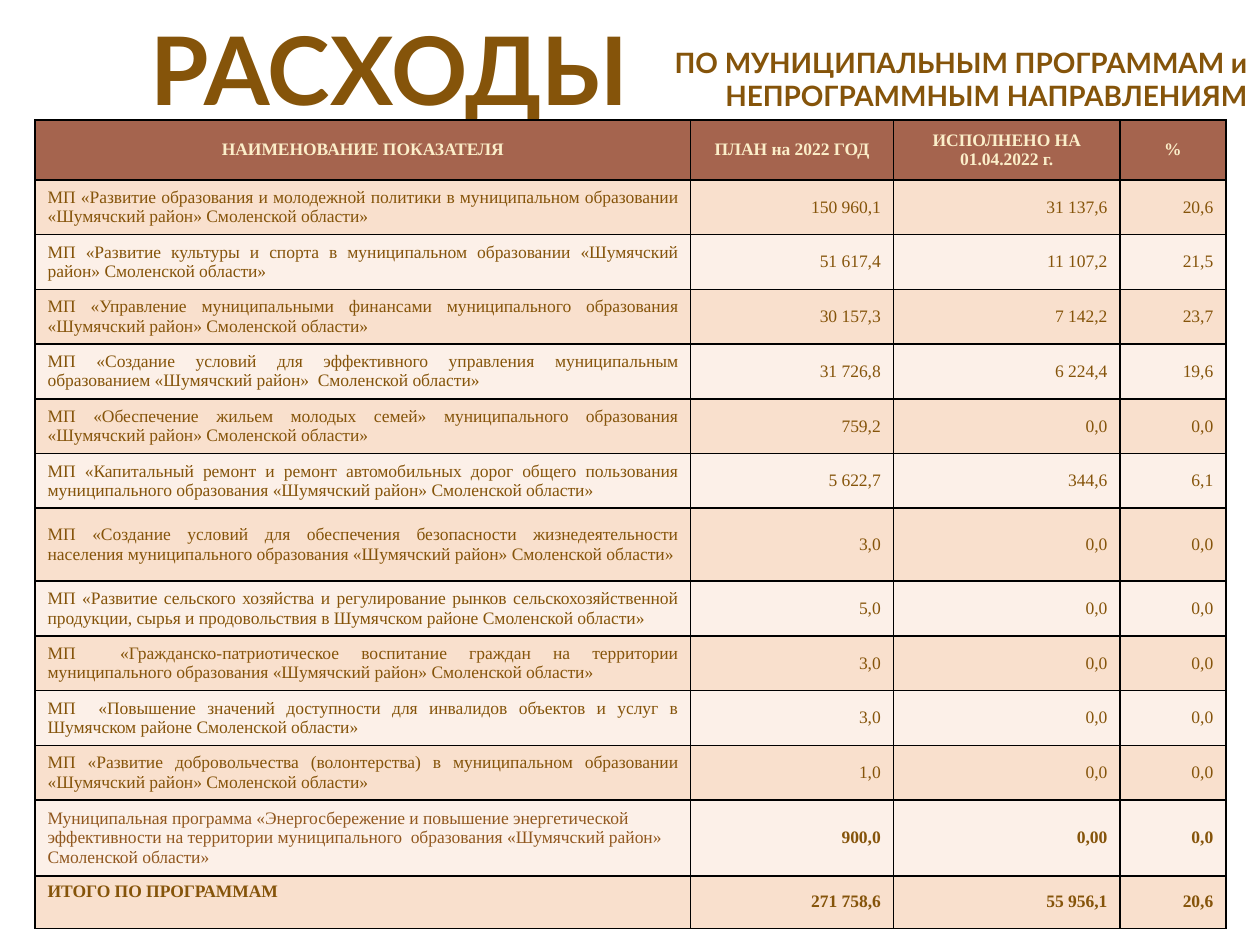
from lxml.etree import SubElement
from pptx import Presentation
from pptx.dml.color import RGBColor
from pptx.enum.text import MSO_ANCHOR as ANCHOR, PP_ALIGN as ALIGN
from pptx.oxml.ns import qn
from pptx.util import Pt

BROWN = RGBColor(0x85, 0x54, 0x0A)
LIGHT_BROWN = RGBColor(0x91, 0x58, 0x1F)
CREAM = RGBColor(0xFB, 0xEE, 0xC9)
HEADER_FILL = RGBColor(0xA5, 0x64, 0x4E)
BANDS = RGBColor(0xF9, 0xE0, 0xCD), RGBColor(0xFC, 0xF0, 0xE8)
BORDER = "000000"

TITLE = "РАСХОДЫ"
SUBTITLE = "ПО МУНИЦИПАЛЬНЫМ ПРОГРАММАМ и НЕПРОГРАММНЫМ НАПРАВЛЕНИЯМ"
HEADER = ("НАИМЕНОВАНИЕ ПОКАЗАТЕЛЯ", "ПЛАН на 2022 ГОД",
          "ИСПОЛНЕНО НА 01.04.2022 г.", "%")
PROGRAMS = [
    ("МП «Развитие образования и молодежной политики в муниципальном образовании "
     "«Шумячский район» Смоленской области»", "150 960,1", "31 137,6", "20,6"),
    ("МП «Развитие культуры и спорта в муниципальном образовании «Шумячский район» "
     "Смоленской области»", "51 617,4", "11 107,2", "21,5"),
    ("МП «Управление муниципальными финансами муниципального образования "
     "«Шумячский район» Смоленской области»", "30 157,3", "7 142,2", "23,7"),
    ("МП «Создание условий для эффективного управления муниципальным образованием "
     "«Шумячский район»  Смоленской области»", "31 726,8", "6 224,4", "19,6"),
    ("МП «Обеспечение жильем молодых семей» муниципального образования "
     "«Шумячский район» Смоленской области»", "759,2", "0,0", "0,0"),
    ("МП «Капитальный ремонт и ремонт автомобильных дорог общего пользования "
     "муниципального образования «Шумячский район» Смоленской области»",
     "5 622,7", "344,6", "6,1"),
    ("МП «Создание условий для обеспечения безопасности жизнедеятельности населения "
     "муниципального образования «Шумячский район» Смоленской области»",
     "3,0", "0,0", "0,0"),
    ("МП «Развитие сельского хозяйства и регулирование рынков сельскохозяйственной "
     "продукции, сырья и продовольствия в Шумячском районе Смоленской области»",
     "5,0", "0,0", "0,0"),
    ("МП  «Гражданско-патриотическое воспитание граждан на территории "
     "муниципального образования «Шумячский район» Смоленской области»",
     "3,0", "0,0", "0,0"),
    ("МП  «Повышение значений доступности для инвалидов объектов и услуг в "
     "Шумячском районе Смоленской области»", "3,0", "0,0", "0,0"),
    ("МП «Развитие добровольчества (волонтерства) в муниципальном образовании "
     "«Шумячский район» Смоленской области»", "1,0", "0,0", "0,0"),
    ("Муниципальная программа «Энергосбережение и повышение энергетической "
     "эффективности на территории муниципального  образования «Шумячский район» "
     "Смоленской области»", "900,0", "0,00", "0,0"),
]
TOTAL = ("ИТОГО ПО ПРОГРАММАМ", "271 758,6", "55 956,1", "20,6")
ROWS = [HEADER, *PROGRAMS, TOTAL]
SAFETY_ROW, ENERGY_ROW, TOTAL_ROW = 7, 12, 13

COL_WIDTHS = (374.5, 116, 129.5, 60.5)
ROW_HEIGHT = 30.1
SPECIAL_HEIGHTS = {0: 34.3, SAFETY_ROW: 41.7, ENERGY_ROW: 40.3}


def style(p, font, size, color, bold, align):
    p.alignment = align
    p.font.name, p.font.size, p.font.bold = font, Pt(size), bold
    p.font.color.rgb = color


def add_heading(slide, box, text, size, align, anchor):
    tf = slide.shapes.add_textbox(*map(Pt, box)).text_frame
    tf.word_wrap = True
    tf.vertical_anchor = anchor
    p = tf.paragraphs[0]
    p.text = text
    style(p, "Lato", size, BROWN, True, align)


def set_cell(cell, text, fill, color, bold, align, anchor):
    cell.text = text
    cell.vertical_anchor = anchor
    style(cell.text_frame.paragraphs[0], "Times New Roman", 10, color, bold, align)
    # Borders must precede the fill in the cell properties.
    props = cell._tc.get_or_add_tcPr()
    for side in ("lnL", "lnR", "lnT", "lnB"):
        line = SubElement(props, qn(f"a:{side}"), w=str(Pt(1)))
        SubElement(SubElement(line, qn("a:solidFill")), qn("a:srgbClr"), val=BORDER)
    cell.fill.solid()
    cell.fill.fore_color.rgb = fill


def cell_look(row, col):
    """Fill, text colour, boldness, alignment and anchor of a table cell."""
    if row == 0:
        return HEADER_FILL, CREAM, True, ALIGN.CENTER, ANCHOR.MIDDLE
    fill = BANDS[(row - 1) % 2]
    if col:
        return fill, BROWN, row >= ENERGY_ROW, ALIGN.RIGHT, ANCHOR.MIDDLE
    if row == TOTAL_ROW:
        return fill, BROWN, True, ALIGN.LEFT, ANCHOR.TOP
    if row == ENERGY_ROW:
        return fill, LIGHT_BROWN, False, ALIGN.LEFT, ANCHOR.MIDDLE
    return fill, BROWN, False, ALIGN.JUSTIFY, ANCHOR.MIDDLE


def add_expenses(slide):
    heights = [SPECIAL_HEIGHTS.get(i, ROW_HEIGHT) for i in range(len(ROWS))]
    table = slide.shapes.add_table(
        len(ROWS), len(HEADER), Pt(20), Pt(68.5),
        Pt(sum(COL_WIDTHS)), Pt(sum(heights))).table
    for column, width in zip(table.columns, COL_WIDTHS):
        column.width = Pt(width)
    for i, (values, height) in enumerate(zip(ROWS, heights)):
        table.rows[i].height = Pt(height)
        for j, text in enumerate(values):
            set_cell(table.cell(i, j), text, *cell_look(i, j))


def main():
    prs = Presentation()
    prs.slide_width, prs.slide_height = Pt(720), Pt(540)
    slide = prs.slides.add_slide(prs.slide_layouts[6])
    add_heading(slide, (0, 11.5, 445, 54.7), TITLE, 54, ALIGN.CENTER, ANCHOR.MIDDLE)
    add_expenses(slide)
    add_heading(slide, (348.5, 22.3, 371.5, 46), SUBTITLE, 16, ALIGN.RIGHT, ANCHOR.TOP)
    prs.save("out.pptx")


if __name__ == "__main__":
    main()
